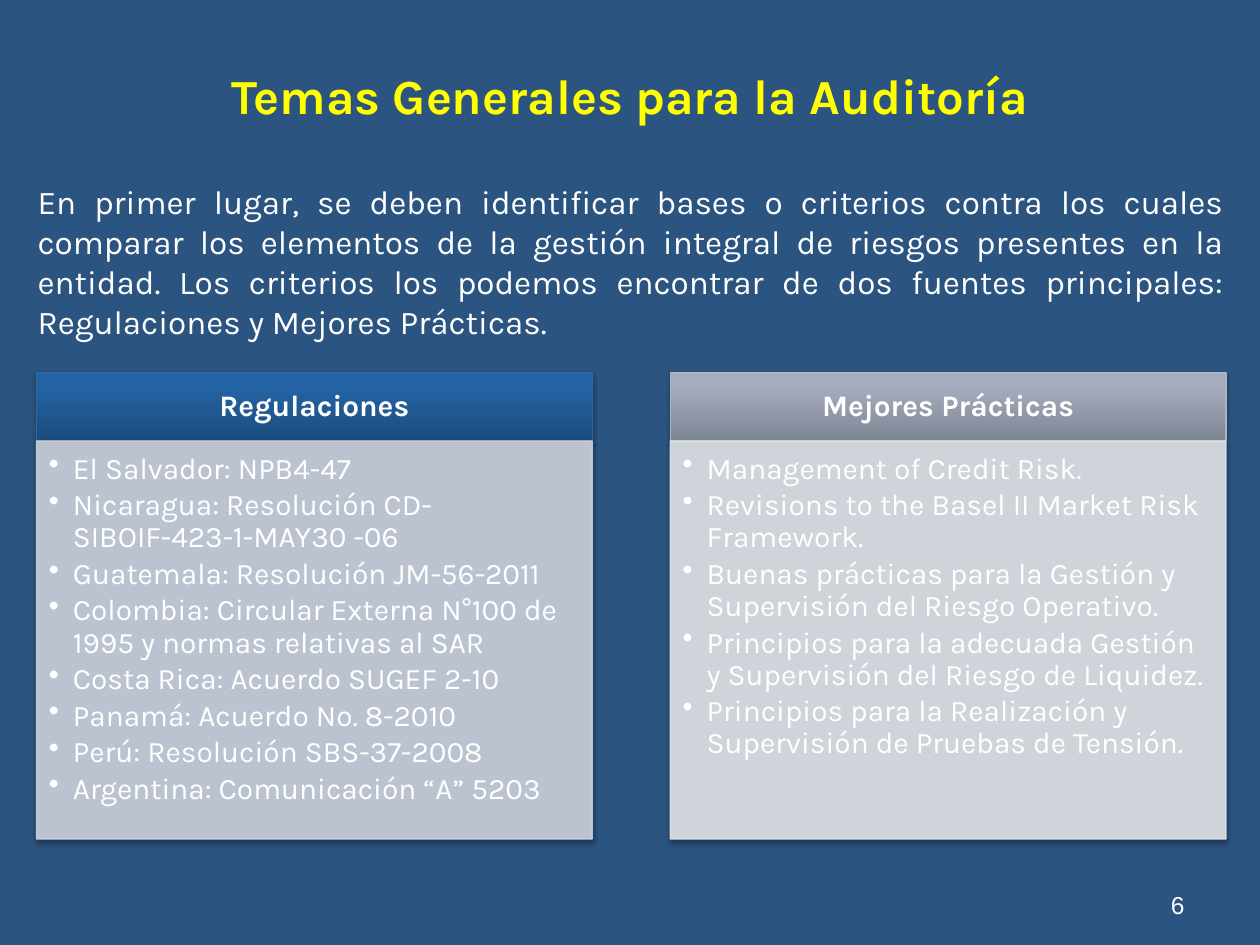
from lxml import etree
from pptx import Presentation
from pptx.dml.color import RGBColor
from pptx.enum.shapes import MSO_SHAPE
from pptx.enum.text import MSO_ANCHOR, MSO_AUTO_SIZE, PP_ALIGN
from pptx.oxml import parse_xml
from pptx.oxml.ns import nsdecls, qn
from pptx.util import Pt

PX = 9144
BACKGROUND = RGBColor(0x2B, 0x54, 0x81)
YELLOW = RGBColor(0xFF, 0xFF, 0x00)
WHITE = RGBColor(0xFF, 0xFF, 0xFF)
BLUE_LINE = RGBColor(0x33, 0x66, 0x99)
GRAY_LINE = RGBColor(0xAC, 0xB3, 0xC1)
BLUE_BODY = RGBColor(0xCE, 0xD3, 0xDE)
GRAY_BODY = RGBColor(0xE3, 0xE5, 0xE9)
BLUE_STOPS = [
    (0, RGBColor(0x1B, 0x4C, 0x7E)),
    (80, RGBColor(0x23, 0x63, 0xA3)),
    (100, RGBColor(0x20, 0x63, 0xA6)),
]
GRAY_STOPS = [
    (0, RGBColor(0x7E, 0x85, 0x92)),
    (80, RGBColor(0xA4, 0xAC, 0xBE)),
    (100, RGBColor(0xA4, 0xAD, 0xBF)),
]

INTRO = (
    "En primer lugar, se deben identificar bases o criterios contra los cuales "
    "comparar los elementos de la gestión integral de riesgos presentes en la "
    "entidad. Los criterios los podemos encontrar de dos fuentes principales: "
    "Regulaciones y Mejores Prácticas."
)
REGULATIONS = [
    "El Salvador: NPB4-47",
    "Nicaragua: Resolución CD-SIBOIF-423-1-MAY30 -06",
    "Guatemala: Resolución JM-56-2011",
    "Colombia: Circular Externa N°100 de 1995 y normas relativas al SAR",
    "Costa Rica: Acuerdo SUGEF 2-10",
    "Panamá: Acuerdo No. 8-2010",
    "Perú: Resolución SBS-37-2008",
    "Argentina: Comunicación “A” 5203",
]
PRACTICES = [
    "Management of Credit Risk.",
    "Revisions to the Basel II Market Risk Framework.",
    "Buenas prácticas para la Gestión y Supervisión del Riesgo Operativo.",
    "Principios para la adecuada Gestión y Supervisión del Riesgo de Liquidez.",
    "Principios para la Realización y Supervisión de Pruebas de Tensión.",
]


def px(*values):
    return [v * PX for v in values]


def write(p, text, size, align, color=WHITE, bold=False, name="Karla"):
    p.text = text
    p.alignment = align
    for r in p.runs:
        r.font.size = Pt(size)
        r.font.name = name
        r.font.bold = bold
        r.font.color.rgb = color


def set_margins(tf, left, top, right, bottom):
    tf.margin_left, tf.margin_top, tf.margin_right, tf.margin_bottom = px(
        left, top, right, bottom)


def fill_gradient(sp, stops):
    sp.fill.gradient()
    grad = sp._element.spPr.find(qn("a:gradFill"))
    gs_list = "".join(
        f'<a:gs pos="{pos * 1000}"><a:srgbClr val="{color}"/></a:gs>'
        for pos, color in stops)
    grad.getparent().replace(grad, parse_xml(
        f'<a:gradFill {nsdecls("a")} rotWithShape="1"><a:gsLst>{gs_list}</a:gsLst>'
        '<a:lin ang="16200000" scaled="0"/></a:gradFill>'))


def add_shadow(sp):
    sp.shadow.inherit = False
    effects = sp._element.spPr.find(qn("a:effectLst"))
    effects.append(parse_xml(
        f'<a:outerShdw {nsdecls("a")} blurRad="39370" dist="22860" dir="5400000" '
        'rotWithShape="0"><a:srgbClr val="000000"><a:alpha val="35000"/>'
        '</a:srgbClr></a:outerShdw>'))


def add_panel(s, box, line_color):
    sp = s.shapes.add_shape(MSO_SHAPE.RECTANGLE, *px(*box))
    sp.line.color.rgb = line_color
    sp.line.width = Pt(0.75)
    add_shadow(sp)
    sp.text_frame.word_wrap = True
    return sp


def add_bullet(p):
    pPr = p._p.get_or_add_pPr()
    pPr.set("marL", str(19 * PX))
    pPr.set("indent", str(-19 * PX))
    etree.SubElement(pPr, qn("a:buChar")).set("char", "•")


def add_title(s, box):
    title = s.shapes.title
    title.left, title.top, title.width, title.height = px(*box)
    tf = title.text_frame
    tf.vertical_anchor = MSO_ANCHOR.MIDDLE
    write(tf.paragraphs[0], "Temas Generales para la Auditoría", 28,
          PP_ALIGN.CENTER, YELLOW, True)


def add_intro(s, box):
    tf = s.shapes.add_textbox(*px(*box)).text_frame
    tf.word_wrap = True
    tf.auto_size = MSO_AUTO_SIZE.SHAPE_TO_FIT_TEXT
    write(tf.paragraphs[0], INTRO, 19, PP_ALIGN.JUSTIFY)


def add_page_number(s, box):
    tf = s.shapes.add_textbox(*px(*box)).text_frame
    tf.word_wrap = True
    tf.vertical_anchor = MSO_ANCHOR.BOTTOM
    write(tf.paragraphs[0], "6", 14, PP_ALIGN.RIGHT, name="Arial")


def add_column(s, box, heading, items, stops, head_line, body_color):
    left, top, width, height = box
    head_height = 54

    head = add_panel(s, (left, top, width, head_height), head_line)
    fill_gradient(head, stops)
    tf = head.text_frame
    tf.vertical_anchor = MSO_ANCHOR.MIDDLE
    set_margins(tf, 13, 8, 13, 8)
    write(tf.paragraphs[0], heading, 17, PP_ALIGN.CENTER, bold=True)
    tf.paragraphs[0].line_spacing = 0.9

    body = add_panel(
        s, (left, top + head_height, width, height - head_height), body_color)
    body.fill.solid()
    body.fill.fore_color.rgb = body_color
    for color in body._element.spPr.iter(qn("a:srgbClr")):
        if color.get("val") == str(body_color):
            etree.SubElement(color, qn("a:alpha")).set("val", "90000")
    tf = body.text_frame
    tf.vertical_anchor = MSO_ANCHOR.TOP
    set_margins(tf, 10, 10, 13, 15)
    for i, item in enumerate(items):
        p = tf.add_paragraph() if i else tf.paragraphs[0]
        add_bullet(p)
        p.level = 1
        write(p, item, 17, PP_ALIGN.LEFT)
        p.line_spacing = 0.9
        p.space_after = Pt(2.5)


def main():
    prs = Presentation()
    prs.slide_width, prs.slide_height = px(1000, 750)
    s = prs.slides.add_slide(prs.slide_layouts[5])
    s.background.fill.solid()
    s.background.fill.fore_color.rgb = BACKGROUND

    add_title(s, (0, 0, 1000, 150))
    add_intro(s, (20, 139, 961, 138))
    add_page_number(s, (717, 683, 233, 52))
    columns = [
        ("Regulaciones", REGULATIONS, BLUE_STOPS, BLUE_LINE, BLUE_BODY),
        ("Mejores Prácticas", PRACTICES, GRAY_STOPS, GRAY_LINE, GRAY_BODY),
    ]
    for i, column in enumerate(columns):
        add_column(s, (29 + i * 503, 296, 441, 370), *column)

    prs.save("out.pptx")


if __name__ == "__main__":
    main()
